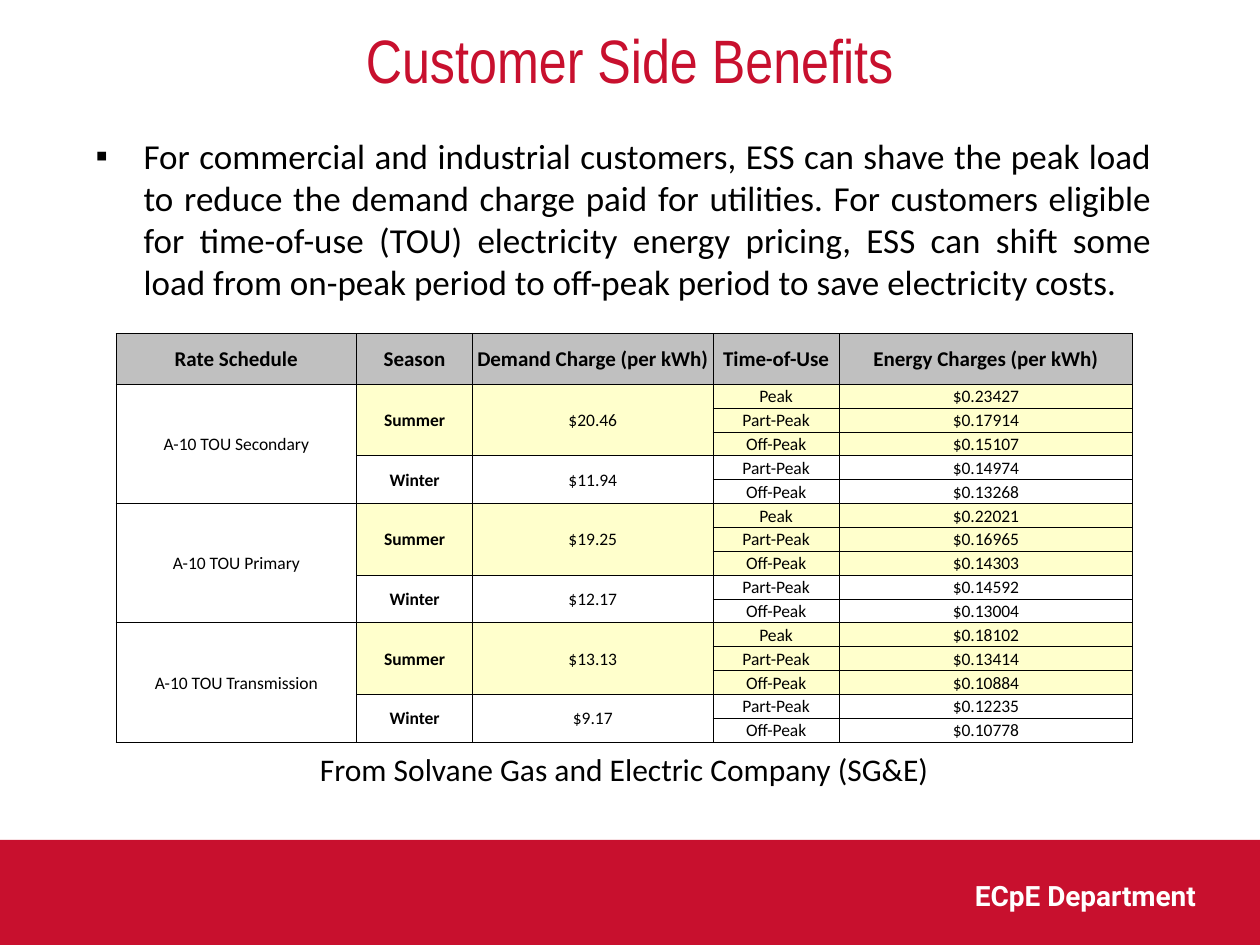
from dataclasses import dataclass

from lxml.etree import SubElement
from pptx import Presentation
from pptx.dml.color import RGBColor as Color
from pptx.enum.shapes import MSO_SHAPE as Shape
from pptx.enum.text import MSO_ANCHOR as Anchor, MSO_AUTO_SIZE as AutoSize, PP_ALIGN as Align
from pptx.oxml.ns import qn
from pptx.util import Emu, Inches, Pt


@dataclass(frozen=True)
class Theme:
    red: str = "C8102E"
    black: str = "000000"
    white: str = "FFFFFF"
    header: str = "C0C0C0"
    summer: str = "FFFFCC"
    title_font: str = "Arial Narrow"
    text_font: str = "Calibri"
    footer_font: str = "Roboto"
    title_size: int = 35
    body_size: int = 20
    source_size: int = 18
    footer_size: int = 16
    header_size: int = 12
    cell_size: int = 10
    border: float = 0.5


THEME = Theme()
WIDTH, HEIGHT = Inches(10), Inches(7.5)

# Places are left, top, width, height in percent of the slide
TITLE_AT = (0, 1.07, 100, 10.27)
BODY_AT = (6.6, 13.6, 85.8, 19.33)
TABLE_AT = (9.2, 35.33, 80.7, 43.33)
SOURCE_AT = (9.2, 78.67, 80.7, 5.33)
BAR_AT = (0, 88.89, 100, 11.11)
FOOTER_AT = (69.2, 92.27, 26.7, 5.6)

# Column widths and row heights in percent of the slide
COLUMN_SHARES = (19.1, 9.2, 19.1, 10, 23.3)
HEADER_SHARE, ROW_SHARE = 5.33, 2.53

BODY = (
    "For commercial and industrial customers, ESS can shave the peak load to reduce "
    "the demand charge paid for utilities. For customers eligible for time-of-use (TOU) "
    "electricity energy pricing, ESS can shift some load from on-peak period to off-peak "
    "period to save electricity costs."
)

HEADINGS = ("Rate Schedule", "Season", "Demand Charge (per kWh)", "Time-of-Use",
            "Energy Charges (per kWh)")
SCHEDULE, SEASON, DEMAND, PERIOD, ENERGY = range(len(HEADINGS))
SEASON_PERIODS = {
    "Summer": ("Peak", "Part-Peak", "Off-Peak"),
    "Winter": ("Part-Peak", "Off-Peak"),
}
SEASON_FILLS = {"Summer": THEME.summer, "Winter": None}
ROWS_PER_SCHEDULE = sum(len(periods) for periods in SEASON_PERIODS.values())
# For each schedule and season: demand charge, energy charge of each period
RATES = {
    "A-10 TOU Secondary": {
        "Summer": ("$20.46", ("$0.23427", "$0.17914", "$0.15107")),
        "Winter": ("$11.94", ("$0.14974", "$0.13268")),
    },
    "A-10 TOU Primary": {
        "Summer": ("$19.25", ("$0.22021", "$0.16965", "$0.14303")),
        "Winter": ("$12.17", ("$0.14592", "$0.13004")),
    },
    "A-10 TOU Transmission": {
        "Summer": ("$13.13", ("$0.18102", "$0.13414", "$0.10884")),
        "Winter": ("$9.17", ("$0.12235", "$0.10778")),
    },
}


def area(place):
    """Turn percent of the slide into lengths."""
    return [Emu(round(side * share / 100))
            for side, share in zip((WIDTH, HEIGHT) * 2, place)]


def paint(item, color):
    """Fill a shape or a cell; no colour leaves it clear."""
    if color is None:
        item.fill.background()
    else:
        item.fill.solid()
        item.fill.fore_color.rgb = Color.from_string(color)


def style(para, font, size, color, align, bold=False):
    para.alignment = align
    para.font.name = font
    para.font.size = Pt(size)
    para.font.bold = bold
    para.font.color.rgb = Color.from_string(color)


def add_bullet(para, indent):
    props = para._p.get_or_add_pPr()
    props.set("marL", str(indent))
    props.set("indent", str(-indent))
    SubElement(props, qn("a:buFont"), typeface="Arial")
    SubElement(props, qn("a:buChar"), char="▪")


def fill_placeholder(box, place, text, anchor):
    box.left, box.top, box.width, box.height = area(place)
    frame = box.text_frame
    frame.text = text
    frame.auto_size = AutoSize.NONE
    frame.vertical_anchor = anchor
    para = frame.paragraphs[0]
    para.space_before = Pt(0)
    return para


def add_text(slide, place, text):
    frame = slide.shapes.add_textbox(*area(place)).text_frame
    frame.word_wrap = True
    frame.text = text
    return frame.paragraphs[0]


def add_bar(slide):
    bar = slide.shapes.add_shape(Shape.RECTANGLE, *area(BAR_AT))
    bar.shadow.inherit = False
    paint(bar, THEME.red)
    bar.line.fill.background()


def add_borders(cell):
    props = cell._tc.get_or_add_tcPr()
    for side in "LRTB":
        line = SubElement(props, qn(f"a:ln{side}"), w=str(Pt(THEME.border)))
        line_fill = SubElement(line, qn("a:solidFill"))
        SubElement(line_fill, qn("a:srgbClr"), val=THEME.black)


def put_cell(table, row, column, text, fill=None, size=THEME.cell_size, bold=False, rows=1):
    """Write one cell that spans the given number of rows."""
    cells = [table.cell(row + step, column) for step in range(rows)]
    cells[0].text = text
    for cell in cells:
        cell.margin_left = cell.margin_right = cell.margin_top = Inches(0.01)
        cell.margin_bottom = 0
        cell.vertical_anchor = Anchor.MIDDLE
        add_borders(cell)
        paint(cell, fill)
        para = cell.text_frame.paragraphs[0]
        style(para, THEME.text_font, size, THEME.black, Align.CENTER, bold)
    if rows > 1:
        cells[0].merge(cells[-1])


def put_season(table, top, season, demand, charges):
    """Write one season's block and return the row below it."""
    periods, fill = SEASON_PERIODS[season], SEASON_FILLS[season]
    put_cell(table, top, SEASON, season, fill, bold=True, rows=len(periods))
    put_cell(table, top, DEMAND, demand, fill, rows=len(periods))
    for row, (period, charge) in enumerate(zip(periods, charges), top):
        put_cell(table, row, PERIOD, period, fill)
        put_cell(table, row, ENERGY, charge, fill)
    return top + len(periods)


def add_rate_table(slide):
    row_count = 1 + ROWS_PER_SCHEDULE * len(RATES)
    table = slide.shapes.add_table(row_count, len(HEADINGS), *area(TABLE_AT)).table

    # Grid
    for column, share in zip(table.columns, COLUMN_SHARES):
        column.width = Emu(round(WIDTH * share / 100))
    for index, row in enumerate(table.rows):
        share = ROW_SHARE if index else HEADER_SHARE
        row.height = Emu(round(HEIGHT * share / 100))

    # Header row
    for column, heading in enumerate(HEADINGS):
        put_cell(table, 0, column, heading, THEME.header, THEME.header_size, bold=True)

    # One block of rows for each schedule
    top = 1
    for schedule, seasons in RATES.items():
        put_cell(table, top, SCHEDULE, schedule, rows=ROWS_PER_SCHEDULE)
        for season, (demand, charges) in seasons.items():
            top = put_season(table, top, season, demand, charges)


def main():
    deck = Presentation()
    deck.slide_width, deck.slide_height = WIDTH, HEIGHT
    slide = deck.slides.add_slide(deck.slide_layouts[1])
    title, body = slide.placeholders

    # Title and bullet
    para = fill_placeholder(title, TITLE_AT, "Customer Side Beneﬁts", Anchor.MIDDLE)
    style(para, THEME.title_font, THEME.title_size, THEME.red, Align.CENTER)
    para = fill_placeholder(body, BODY_AT, BODY, Anchor.TOP)
    add_bullet(para, Inches(0.38))
    style(para, THEME.text_font, THEME.body_size, THEME.black, Align.JUSTIFY)

    # Rates and where they come from
    add_rate_table(slide)
    para = add_text(slide, SOURCE_AT, "From Solvane Gas and Electric Company (SG&E)")
    style(para, THEME.text_font, THEME.source_size, THEME.black, Align.CENTER)

    # Footer
    add_bar(slide)
    para = add_text(slide, FOOTER_AT, "ECpE Department")
    style(para, THEME.footer_font, THEME.footer_size, THEME.white, Align.RIGHT, bold=True)

    deck.save("out.pptx")


if __name__ == "__main__":
    main()
